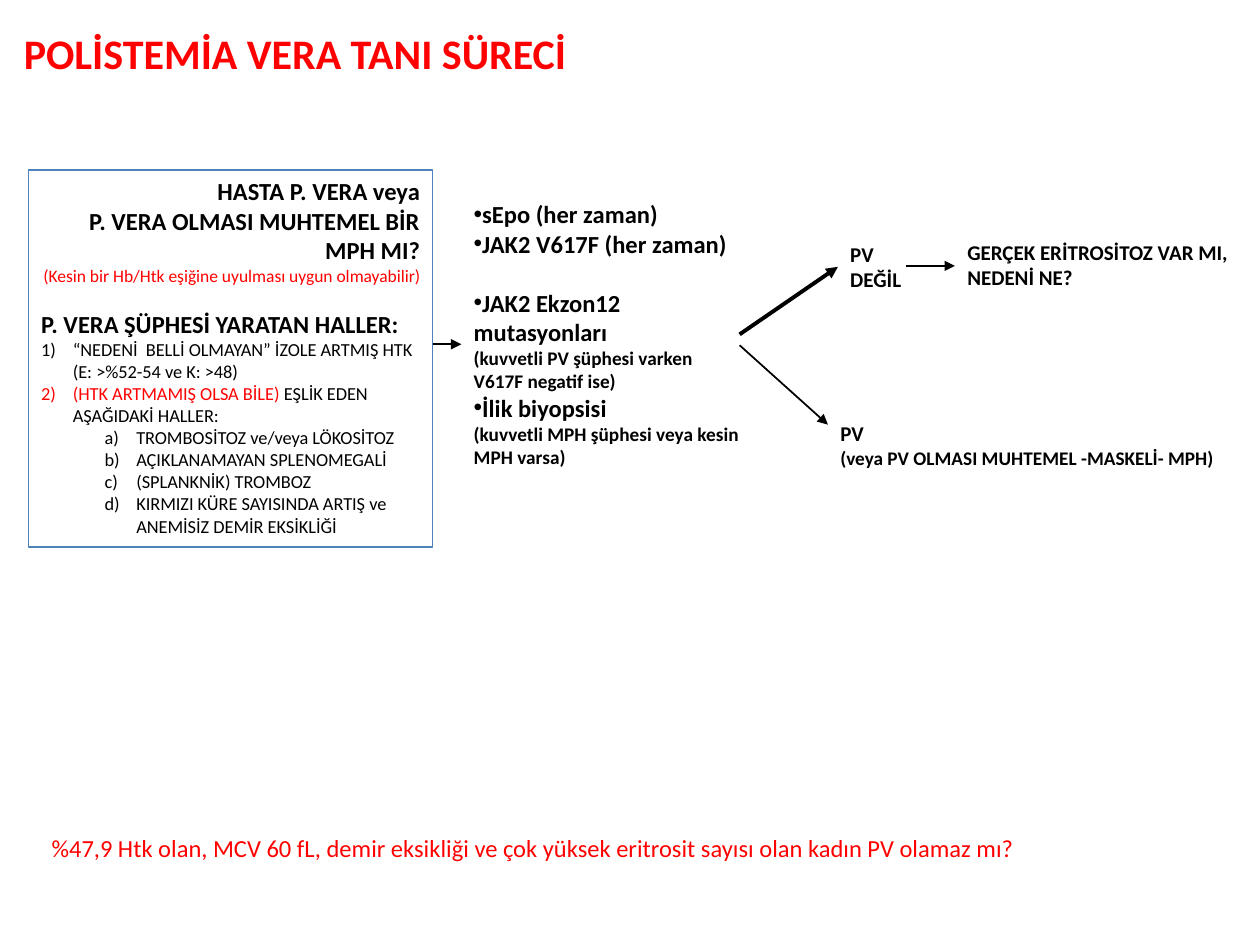
from dataclasses import dataclass

from lxml.etree import SubElement
from pptx import Presentation
from pptx.dml.color import RGBColor
from pptx.enum.shapes import MSO_CONNECTOR, MSO_SHAPE
from pptx.enum.text import MSO_ANCHOR, PP_ALIGN
from pptx.oxml.ns import qn
from pptx.util import Cm, Pt

BLACK = RGBColor(0x00, 0x00, 0x00)
RED = RGBColor(0xFF, 0x00, 0x00)
BLUE = RGBColor(0x4F, 0x81, 0xBD)
FONT = "Calibri"
HANGING = 0.64


@dataclass
class Line:
    """One paragraph, with an optional black ending after its coloured text."""
    text: str
    size: float
    bold: bool = True
    color: RGBColor = BLACK
    ending: str = ""
    align: PP_ALIGN = PP_ALIGN.LEFT
    before: float = 0
    indent: float = 0
    hanging: float = 0
    bullet: str = ""
    numbering: str = ""
    start: int = 1


def format_span(span, line, color):
    """Apply the line's font to a span."""
    span.font.name = FONT
    span.font.size = Pt(line.size)
    span.font.bold = line.bold
    span.font.color.rgb = color


def mark_paragraph(paragraph, line):
    """Set indents and the bullet or number of a paragraph."""
    properties = paragraph._p.get_or_add_pPr()
    properties.set("marL", str(Cm(line.indent)))
    properties.set("indent", str(-Cm(line.hanging)))
    if line.bullet:
        SubElement(properties, qn("a:buFont"), typeface="Arial")
        SubElement(properties, qn("a:buChar"), char=line.bullet)
    elif line.numbering:
        number = SubElement(properties, qn("a:buAutoNum"), type=line.numbering)
        if line.start > 1:
            number.set("startAt", str(line.start))


def write_lines(box, lines, wrap=True):
    """Fill a shape with formatted paragraphs."""
    frame = box.text_frame
    frame.word_wrap = wrap
    frame.vertical_anchor = MSO_ANCHOR.TOP
    for index, line in enumerate(lines):
        paragraph = frame.add_paragraph() if index else frame.paragraphs[0]
        paragraph.text = line.text
        paragraph.alignment = line.align
        paragraph.space_before = Pt(line.before)
        format_span(paragraph.runs[0], line, line.color)
        if line.ending:
            span = paragraph.add_run()
            span.text = line.ending
            format_span(span, line, BLACK)
        mark_paragraph(paragraph, line)


def add_text(page, left, top, width, height, lines, wrap=True):
    """Add a text box."""
    box = page.shapes.add_textbox(Cm(left), Cm(top), Cm(width), Cm(height))
    write_lines(box, lines, wrap)


def add_panel(page, left, top, width, height, lines):
    """Add an outlined rectangle with text."""
    box = page.shapes.add_shape(
        MSO_SHAPE.RECTANGLE, Cm(left), Cm(top), Cm(width), Cm(height))
    box.shadow.inherit = False
    box.fill.background()
    box.line.color.rgb = BLUE
    box.line.width = Pt(0.75)
    write_lines(box, lines)


def add_arrow(page, start, end, width):
    """Add a black arrow between two points."""
    arrow = page.shapes.add_connector(
        MSO_CONNECTOR.STRAIGHT, *(Cm(value) for value in (*start, *end)))
    arrow.line.color.rgb = BLACK
    arrow.line.width = Pt(width)
    SubElement(arrow.line._get_or_add_ln(), qn("a:tailEnd"), type="triangle")
    SubElement(arrow._element.spPr, qn("a:effectLst"))


def suspicion_lines():
    """Return the question and the list of suspicious findings."""
    right = PP_ALIGN.RIGHT
    numbered = dict(size=10.5, bold=False, indent=HANGING, hanging=HANGING,
                    numbering="arabicParenR")
    findings = ["TROMBOSİTOZ ve/veya LÖKOSİTOZ", "AÇIKLANAMAYAN SPLENOMEGALİ",
                "(SPLANKNİK) TROMBOZ",
                "KIRMIZI KÜRE SAYISINDA ARTIŞ ve ANEMİSİZ DEMİR EKSİKLİĞİ"]
    return [
        Line("HASTA P. VERA veya", 14, align=right),
        Line("P. VERA OLMASI MUHTEMEL BİR MPH MI?", 14, align=right),
        Line("(Kesin bir Hb/Htk eşiğine uyulması uygun olmayabilir)", 10,
             bold=False, color=RED, align=right),
        Line("P. VERA ŞÜPHESİ YARATAN HALLER:", 14, before=13.4),
        Line("“NEDENİ  BELLİ OLMAYAN” İZOLE ARTMIŞ HTK", **numbered),
        Line("(E: >%52-54 ve K: >48)", 10.5, bold=False, indent=HANGING),
        Line("(HTK ARTMAMIŞ OLSA BİLE) ", color=RED,
             ending="EŞLİK EDEN AŞAĞIDAKİ HALLER:", start=2, **numbered),
        *(Line(finding, 10.5, bold=False, indent=3 * HANGING,
               hanging=HANGING, numbering="alphaLcParenR")
          for finding in findings),
    ]


def test_lines():
    """Return the laboratory tests and their conditions."""
    return [
        Line("sEpo (her zaman)", 14, bullet="•"),
        Line("JAK2 V617F (her zaman)", 14, bullet="•"),
        Line("JAK2 Ekzon12 mutasyonları", 14, bullet="•", before=17),
        Line("(kuvvetli PV şüphesi varken V617F negatif ise)", 11),
        Line("İlik biyopsisi", 14, bullet="•"),
        Line("(kuvvetli MPH şüphesi veya kesin MPH varsa)", 11),
    ]


def main():
    """Build the diagnostic flow slide."""
    deck = Presentation()
    deck.slide_width, deck.slide_height = Cm(25.4), Cm(19.05)
    page = deck.slides.add_slide(deck.slide_layouts[6])

    add_text(page, 0.23, 0.43, 11.56, 1.27,
             [Line("POLİSTEMİA VERA TANI SÜRECİ", 24, color=RED)], wrap=False)
    add_panel(page, 0.58, 3.43, 8.14, 7.6, suspicion_lines())
    add_text(page, 9.3, 3.89, 6, 5.82, test_lines())
    add_text(page, 16.89, 4.75, 1.55, 1.27,
             [Line("PV", 12), Line("DEĞİL", 12)], wrap=False)
    add_text(page, 19.25, 4.7, 6.12, 1.27,
             [Line("GERÇEK ERİTROSİTOZ VAR MI, NEDENİ NE?", 12)])
    add_text(page, 16.69, 8.36, 8.1, 1.24,
             [Line("PV", 12),
              Line("(veya PV OLMASI MUHTEMEL -MASKELİ- MPH)", 11)], wrap=False)
    add_text(page, 0.79, 16.66, 24.2, 0.86,
             [Line("%47,9 Htk olan, MCV 60 fL, demir eksikliği ve çok yüksek "
                   "eritrosit sayısı olan kadın PV olamaz mı?",
                   14, bold=False, color=RED)])

    add_arrow(page, (8.73, 6.94), (9.3, 6.94), 1)
    add_arrow(page, (14.91, 6.74), (16.89, 5.38), 2.25)
    add_arrow(page, (14.91, 6.96), (16.69, 8.56), 1)
    add_arrow(page, (18.26, 5.36), (19.25, 5.36), 1.5)

    deck.save("out.pptx")


if __name__ == "__main__":
    main()
